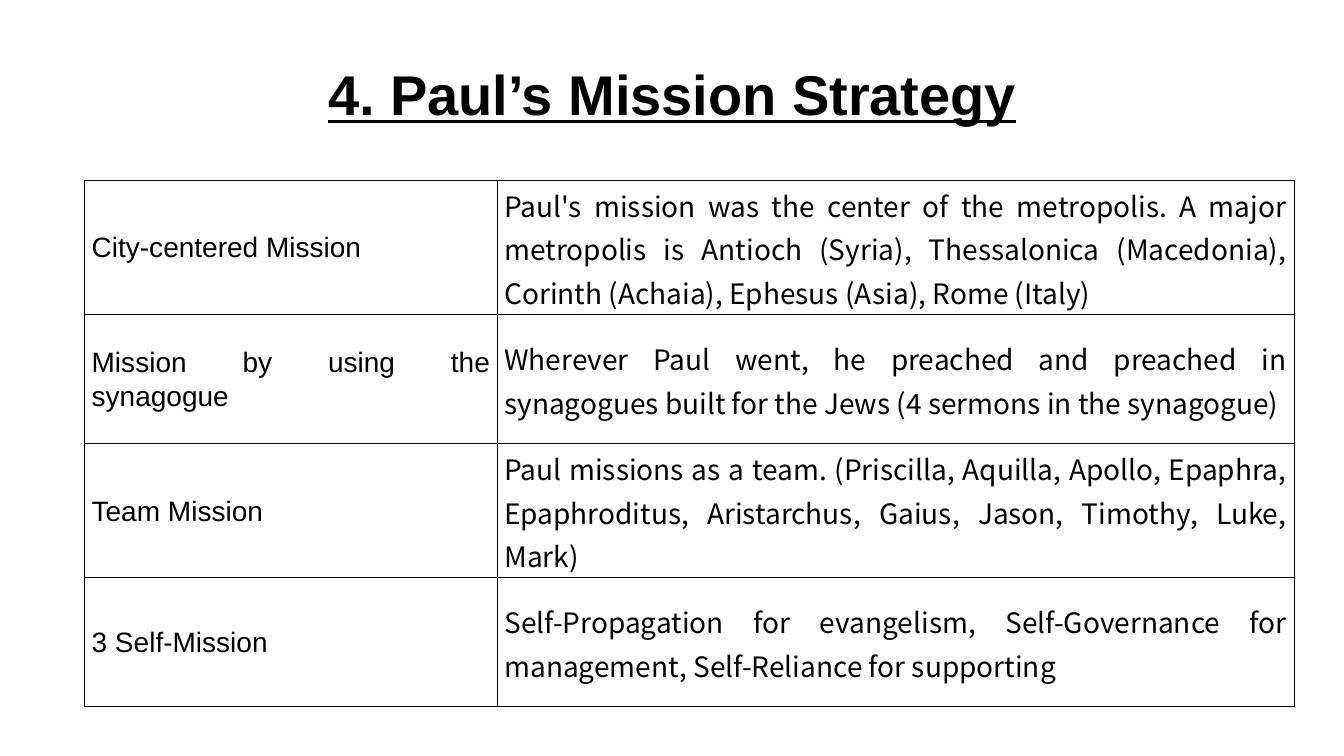
from dataclasses import dataclass

from lxml import etree
from pptx import Presentation
from pptx import util as u
from pptx.dml import color
from pptx.enum import text
from pptx.oxml import ns


@dataclass(frozen=True)
class Theme:
    ink: str = "000000"
    paper: str = "FFFFFF"
    label_font: str = "Arial"
    detail_font: str = "Noto Sans CJK KR"
    title_size: int = 40
    body_size: int = 20
    border_width: float = 0.28


STRATEGIES = [
    ("City-centered Mission ",
     "Paul's mission was the center of the metropolis. A major metropolis is "
     "Antioch (Syria), Thessalonica (Macedonia), Corinth (Achaia), "
     "Ephesus (Asia), Rome (Italy)"),
    ("Mission by using the synagogue",
     "Wherever Paul went, he preached and preached in synagogues built for "
     "the Jews (4 sermons in the synagogue)"),
    ("Team Mission",
     "Paul missions as a team. (Priscilla, Aquilla, Apollo, Epaphra, "
     "Epaphroditus, Aristarchus, Gaius, Jason, Timothy, Luke, Mark)"),
    ("3 Self-Mission",
     "Self-Propagation for evangelism, Self-Governance for management, "
     "Self-Reliance for supporting "),
]


def write(frame, words, *, font, size, ink, align, bold=False, underline=False,
          line_spacing=None, space_after=None):
    frame.word_wrap = True
    para = frame.paragraphs[0]
    para.alignment = align
    if line_spacing is not None:
        para.line_spacing = line_spacing
    if space_after is not None:
        para.space_after = u.Pt(space_after)
    span = para.add_run()
    span.text = words
    span.font.name = font
    span.font.size = u.Pt(size)
    span.font.bold = bold
    span.font.underline = underline
    span.font.color.rgb = color.RGBColor.from_string(ink)


class SlideBuilder:
    def __init__(self, deck, theme):
        self.theme = theme
        self.page = deck.slides.add_slide(deck.slide_layouts[5])
        fill = self.page.background.fill
        fill.solid()
        fill.fore_color.rgb = color.RGBColor.from_string(theme.paper)

    def title(self, words, left, top, width, height):
        box = self.page.shapes.title
        box.left, box.top = u.Cm(left), u.Cm(top)
        box.width, box.height = u.Cm(width), u.Cm(height)
        frame = box.text_frame
        frame.vertical_anchor = text.MSO_ANCHOR.MIDDLE
        frame.auto_size = text.MSO_AUTO_SIZE.NONE
        write(frame, words, font=self.theme.label_font,
              size=self.theme.title_size, ink=self.theme.ink,
              align=text.PP_ALIGN.CENTER, bold=True, underline=True)

    def table(self, rows, left, top, widths, row_height):
        frame = self.page.shapes.add_table(
            len(rows), len(widths), u.Cm(left), u.Cm(top),
            u.Cm(sum(widths)), u.Cm(row_height * len(rows)))
        table = frame.table
        table.first_row = table.horz_banding = False
        for column, width in zip(table.columns, widths):
            column.width = u.Cm(width)
        fonts = (self.theme.label_font, self.theme.detail_font)
        for row, entries in zip(table.rows, rows):
            row.height = u.Cm(row_height)
            for cell, words, font in zip(row.cells, entries, fonts):
                self.cell(cell, words, font)

    def cell(self, cell, words, font):
        cell.margin_left = cell.margin_right = u.Cm(0.18)
        cell.margin_top = cell.margin_bottom = u.Cm(0.05)
        cell.vertical_anchor = text.MSO_ANCHOR.MIDDLE
        self.borders(cell)
        cell.fill.background()
        write(cell.text_frame, words, font=font, size=self.theme.body_size,
              ink=self.theme.ink, align=text.PP_ALIGN.JUSTIFY,
              line_spacing=1.07, space_after=8)

    def borders(self, cell):
        properties = cell._tc.get_or_add_tcPr()
        for side in ("L", "R", "T", "B"):
            line = etree.SubElement(properties, ns.qn(f"a:ln{side}"),
                                    w=str(u.Pt(self.theme.border_width)))
            fill = etree.SubElement(line, ns.qn("a:solidFill"))
            etree.SubElement(fill, ns.qn("a:srgbClr"), val=self.theme.ink)


def main():
    deck = Presentation()
    deck.slide_width, deck.slide_height = u.Cm(33.87), u.Cm(19.05)
    slide = SlideBuilder(deck, Theme())
    slide.title("4. Paul’s Mission Strategy", 1.7, 0.76, 30.48, 3.18)
    slide.table(STRATEGIES, 2.13, 4.53, (10.4, 20.08), 3.25)
    deck.save("out.pptx")


if __name__ == "__main__":
    main()
